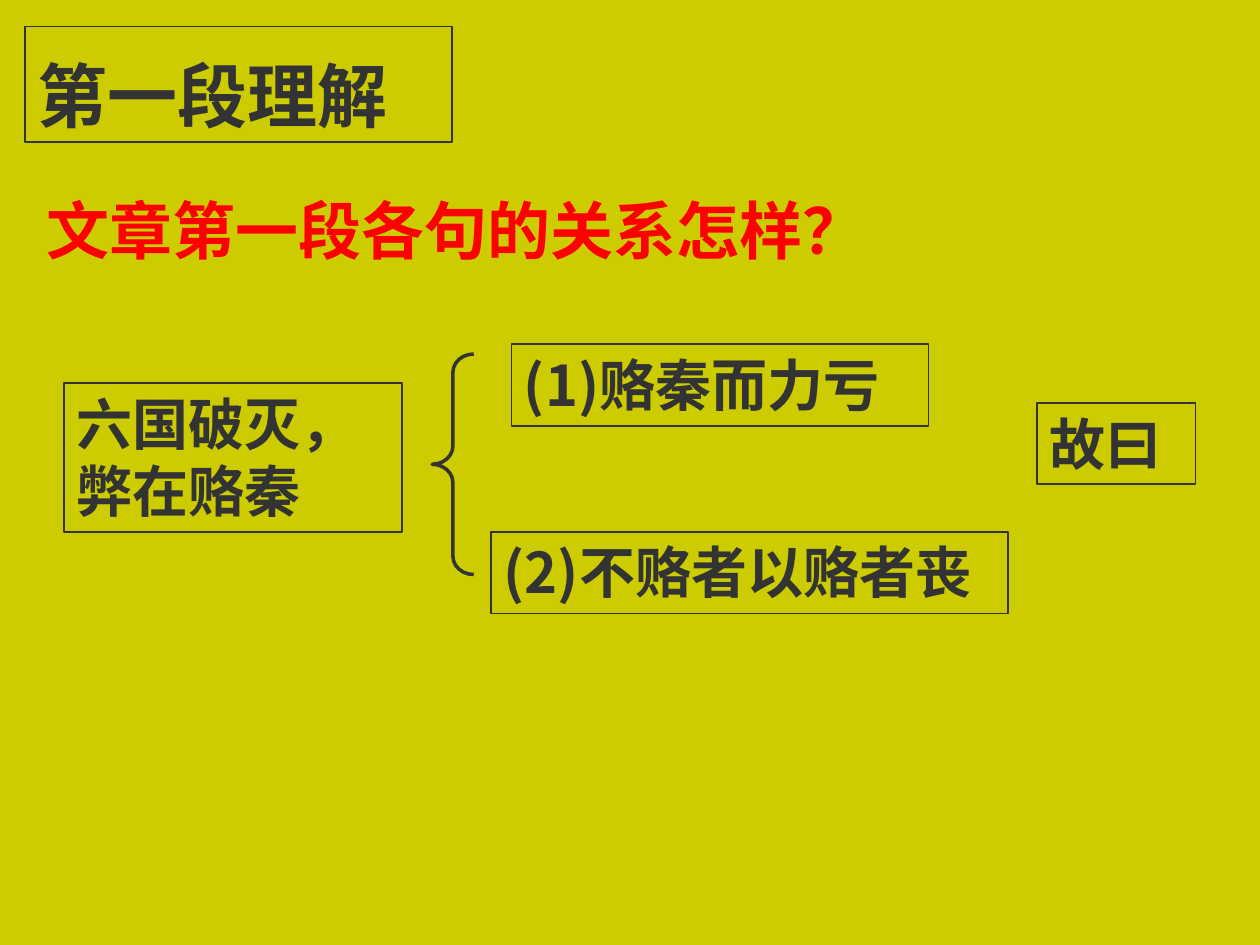
from pptx import Presentation
from pptx.dml.color import RGBColor
from pptx.enum.shapes import MSO_SHAPE
from pptx.enum.text import MSO_ANCHOR, MSO_AUTO_SIZE, PP_ALIGN
from pptx.oxml.ns import qn
from pptx.util import Inches, Pt
from lxml.etree import SubElement

CJK = "Noto Sans CJK SC"
INK, RED, OLIVE = "333333", "FF0000", "CCCC00"


def color(value):
    return RGBColor.from_string(value)


class Deck:
    """Holds the shared style and the current slide."""

    def __init__(self, s):
        self.s = s
        s.background.fill.solid()
        s.background.fill.fore_color.rgb = color(OLIVE)

    def outline(self, sp, width=1):
        sp.line.color.rgb = color(INK)
        sp.line.width = Pt(width)

    def set_text(self, sp, text, size, ink=INK, font=CJK, anchor=MSO_ANCHOR.TOP,
                 wrap=True, auto_size=MSO_AUTO_SIZE.SHAPE_TO_FIT_TEXT):
        tf = sp.text_frame
        frame = {"word_wrap": wrap, "auto_size": auto_size,
                 "vertical_anchor": anchor}
        for name, value in frame.items():
            setattr(tf, name, value)
        p = tf.paragraphs[0]
        p.alignment = PP_ALIGN.LEFT
        r = p.add_run()
        r.text = text
        r.font.color.rgb = color(ink)
        for name, value in {"size": Pt(size), "bold": True, "name": font}.items():
            setattr(r.font, name, value)
        SubElement(r._r.get_or_add_rPr(), qn("a:ea"), typeface=CJK)

    def title(self, text, box):
        sp = self.s.shapes.title
        for name, value in zip(("left", "top", "width", "height"), box):
            setattr(sp, name, Inches(value))
        self.outline(sp)
        self.set_text(sp, text, 40, font="Times New Roman",
                      anchor=MSO_ANCHOR.BOTTOM, auto_size=MSO_AUTO_SIZE.NONE)

    def question(self, text, box):
        sp = self.s.shapes.add_textbox(*map(Inches, box))
        self.set_text(sp, text, 36, ink=RED, wrap=False)

    def shape(self, kind, box, width=1):
        sp = self.s.shapes.add_shape(kind, *map(Inches, box))
        sp.shadow.inherit = False
        sp.fill.background()
        self.outline(sp, width)
        return sp

    def label(self, text, box):
        self.set_text(self.shape(MSO_SHAPE.RECTANGLE, box), text, 32)

    def brace(self, box):
        sp = self.shape(MSO_SHAPE.LEFT_BRACE, box, width=2)
        sp.adjustments[0] = 0.44
        sp.adjustments[1] = 0.5


def main():
    prs = Presentation()
    prs.slide_width, prs.slide_height = Inches(10), Inches(7.5)
    deck = Deck(prs.slides.add_slide(prs.slide_layouts[5]))

    deck.title("第一段理解", (0.2, 0.21, 3.39, 0.92))
    deck.question("文章第一段各句的关系怎样？", (0.27, 1.47, 6.72, 0.7))
    deck.brace((3.43, 2.81, 0.33, 1.75))
    labels = [
        ("六国破灭， 弊在赂秦", (0.51, 3.04, 2.68, 1.18)),
        ("(1)赂秦而力亏", (4.06, 2.73, 3.31, 0.65)),
        ("(2)不赂者以赂者丧", (3.9, 4.22, 4.1, 0.65)),
        ("故曰", (8.23, 3.2, 1.26, 0.64)),
    ]
    for text, box in labels:
        deck.label(text, box)

    prs.save("out.pptx")


if __name__ == "__main__":
    main()
